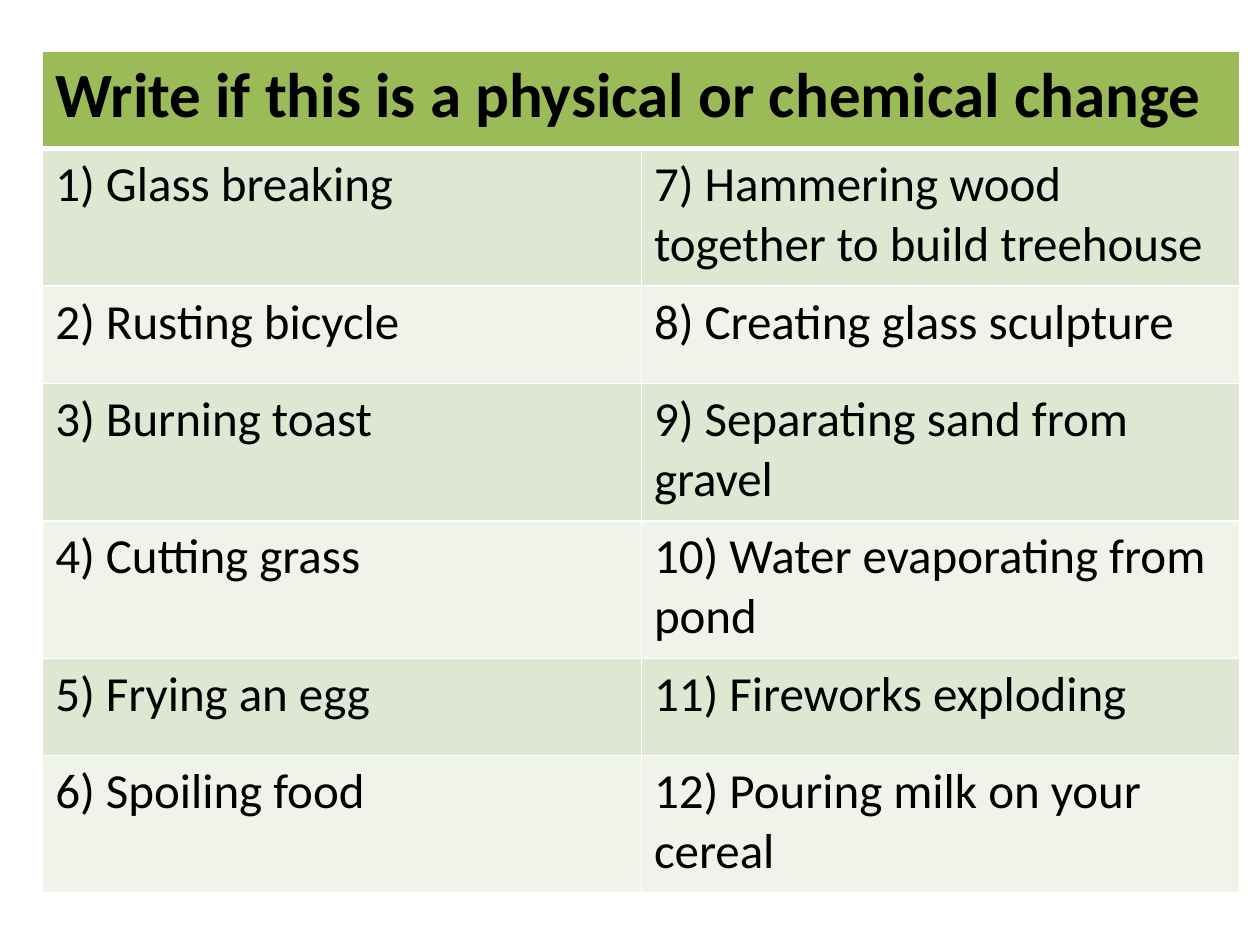
from dataclasses import dataclass

from lxml.etree import SubElement
from pptx import Presentation
from pptx.dml.color import RGBColor
from pptx.oxml.ns import qn
from pptx.table import Table, _Cell as Cell
from pptx.util import Cm, Pt


@dataclass(frozen=True)
class Theme:
    font: str = "Calibri"
    text: str = "000000"
    border: str = "FFFFFF"
    heading_fill: str = "9BBB59"
    bands: tuple[str, str] = ("DEE7D1", "EFF3EA")
    heading_size: int = 36
    body_size: int = 28
    thin_line: int = 1
    thick_line: int = 3


@dataclass(frozen=True)
class QuestionRow:
    left: str
    right: str
    height: float


THEME = Theme()
SHORT_ROW, TALL_ROW = 1.96, 2.77
COLUMN_WIDTH = 12.07
TABLE_LEFT, TABLE_TOP = 0.86, 1.04
HEADING = "Write if this is a physical or chemical change"
QUESTIONS = [
    QuestionRow("Glass breaking", "Hammering wood together to build treehouse", TALL_ROW),
    QuestionRow("Rusting bicycle", "Creating glass sculpture", SHORT_ROW),
    QuestionRow("Burning toast", "Separating sand from gravel", TALL_ROW),
    QuestionRow("Cutting grass", "Water evaporating from pond", TALL_ROW),
    QuestionRow("Frying an egg", "Fireworks exploding", SHORT_ROW),
    QuestionRow("Spoiling food", "Pouring milk on your cereal", TALL_ROW),
]


def set_borders(cell: Cell, widths: dict[str, int]) -> None:
    """Draw solid borders; widths maps the sides L, R, T and B to points."""
    properties = cell._tc.get_or_add_tcPr()
    for position, (side, width) in enumerate(widths.items()):
        line = SubElement(properties, qn(f"a:ln{side}"), w=str(Pt(width)))
        fill = SubElement(line, qn("a:solidFill"))
        SubElement(fill, qn("a:srgbClr"), val=THEME.border)
        properties.insert(position, line)  # borders precede the cell fill


def write_cell(cell: Cell, text: str, fill: str, size: int, bold: bool = False,
               top: int = THEME.thin_line, bottom: int = THEME.thin_line) -> None:
    cell.fill.solid()
    cell.fill.fore_color.rgb = RGBColor.from_string(fill)
    thin = THEME.thin_line
    set_borders(cell, {"L": thin, "R": thin, "T": top, "B": bottom})
    run = cell.text_frame.paragraphs[0].add_run()
    run.text = text
    font_format = {"name": THEME.font, "size": Pt(size), "bold": bold}
    for attribute, value in font_format.items():
        setattr(run.font, attribute, value)
    run.font.color.rgb = RGBColor.from_string(THEME.text)


def fill_heading(table: Table) -> None:
    first, last = table.cell(0, 0), table.cell(0, 1)
    first.merge(last)
    write_cell(first, HEADING, THEME.heading_fill, THEME.heading_size,
               bold=True, bottom=THEME.thick_line)


def fill_questions(table: Table) -> None:
    for index, question in enumerate(QUESTIONS):
        row = index + 1
        table.rows[row].height = Cm(question.height)
        top = THEME.thick_line if index == 0 else THEME.thin_line
        for column, text in enumerate((question.left, question.right)):
            number = row + column * len(QUESTIONS)
            write_cell(table.cell(row, column), f"{number}) {text}",
                       THEME.bands[index % 2], THEME.body_size, top=top)


def main() -> None:
    presentation = Presentation()
    presentation.slide_width, presentation.slide_height = Cm(25.4), Cm(19.05)
    slide = presentation.slides.add_slide(presentation.slide_layouts[6])
    height = SHORT_ROW + sum(question.height for question in QUESTIONS)
    table = slide.shapes.add_table(
        len(QUESTIONS) + 1, 2, Cm(TABLE_LEFT), Cm(TABLE_TOP),
        Cm(2 * COLUMN_WIDTH), Cm(height)).table
    for column in table.columns:
        column.width = Cm(COLUMN_WIDTH)
    table.rows[0].height = Cm(SHORT_ROW)
    fill_heading(table)
    fill_questions(table)
    presentation.save("out.pptx")


if __name__ == "__main__":
    main()
